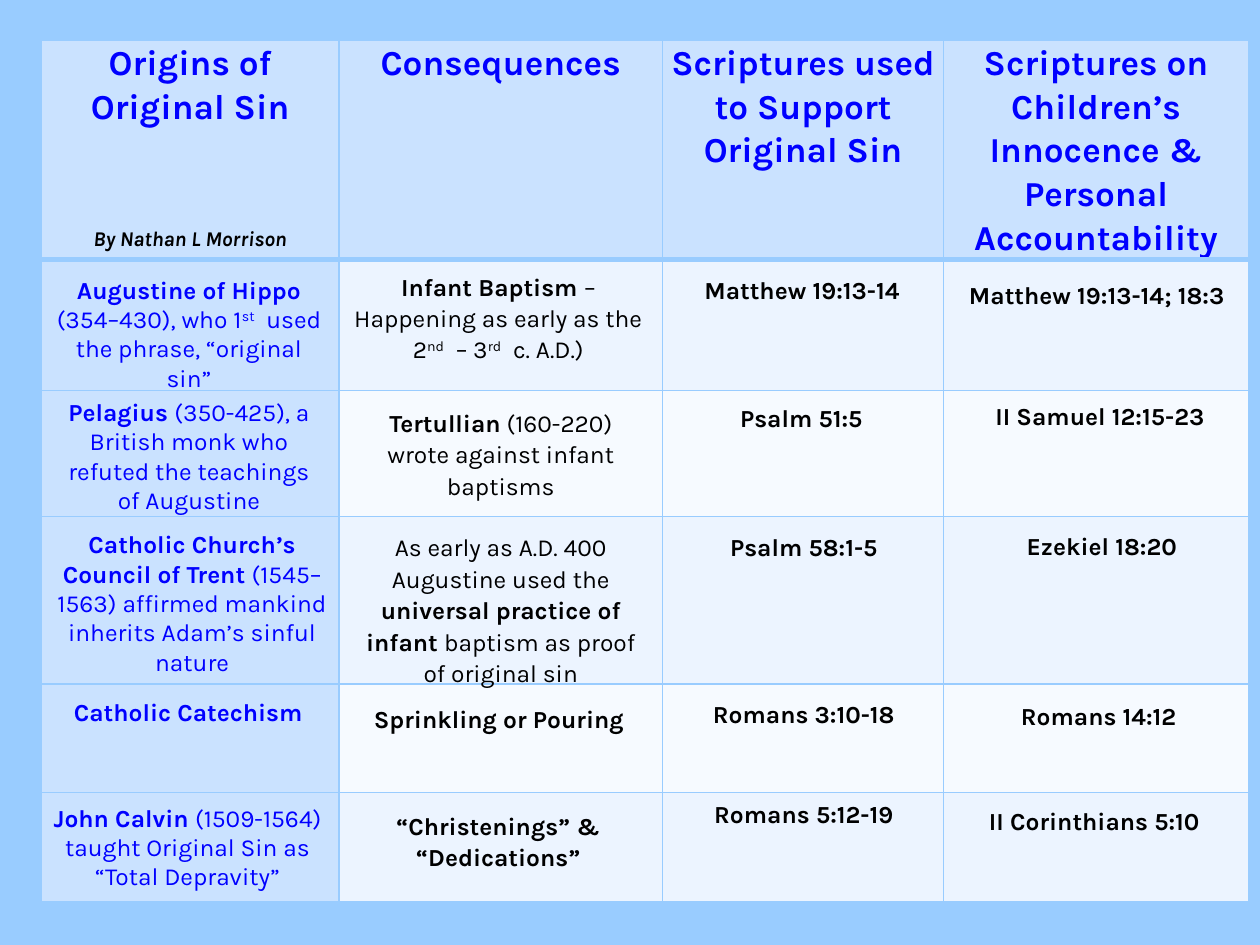
from dataclasses import dataclass
from itertools import accumulate

from lxml.etree import SubElement
from pptx import Presentation
from pptx.dml.color import RGBColor
from pptx.enum.text import MSO_AUTO_SIZE as AutoSize, PP_ALIGN as Align
from pptx.oxml.ns import qn
from pptx.util import Inches, Pt


@dataclass(frozen=True)
class Theme:
    font: str = "Karla"
    background: str = "99CCFF"
    accent_fill: str = "CAE2FF"
    band_fills: tuple = ("ECF4FF", "F6FAFF")
    accent_text: str = "0000FF"
    body_text: str = "000000"
    heading_size: int = 20
    body_size: int = 14
    byline_size: int = 12
    thin_line: int = 1
    thick_line: int = 3
    line_spacing: float = 1.07


THEME = Theme()

TABLE_LEFT, TABLE_TOP = 0.33, 0.32
COLUMN_WIDTHS = [2.36, 2.57, 2.23, 2.42]
ROW_HEIGHTS = [1.73, 1.04, 1, 1.33, 0.86, 0.87]

HEADINGS = [
    "Origins of Original Sin",
    "Consequences",
    "Scriptures used to Support Original Sin",
    "Scriptures on Children’s Innocence & Personal Accountability",
]

# One row of notes per table row. Each note is its offset from the cell corner,
# its width and height, and its text: *bold*, ^superscript^.
NOTES = [
    [
        (0.01, 0.08, 2.32, 1.04, "*Augustine of Hippo *(354–430), who 1^st^  used the phrase, “original sin”"),
        (0.02, 0.04, 2.49, 0.83, "*Infant Baptism *– Happening as early as the 2^nd^  – 3^rd^  c. A.D.)"),
        (0.01, 0.07, 2.19, 0.33, "*Matthew 19:13-14*"),
        (0, 0.11, 2.43, 0.58, "*Matthew 19:13-14; 18:3*"),
    ],
    [
        (0.01, 0.01, 2.32, 1.04, "*Pelagius *(350-425), a British monk who refuted the teachings of Augustine"),
        (0.04, 0.08, 2.49, 0.83, "*Tertullian* (160-220) wrote against infant baptisms"),
        (-0.01, 0.04, 2.22, 0.33, "*Psalm 51:5*"),
        (0.05, 0.03, 2.38, 0.33, "*II Samuel 12:15-23*"),
    ],
    [
        (0.02, 0.06, 2.35, 1.28,
         "*Catholic Church’s Council of Trent *(1545–1563) affirmed mankind inherits Adam’s sinful nature"),
        (0.04, 0.07, 2.49, 1.34,
         "As early as A.D. 400 Augustine used the *universal practice of infant *baptism as proof of original sin"),
        (0.01, 0.07, 2.22, 0.33, "*Psalm 58:1-5*"),
        (0.02, 0.06, 2.47, 0.33, "*Ezekiel 18:20*"),
    ],
    [
        (0, 0.06, 2.33, 0.34, "*Catholic Catechism*"),
        (0.02, 0.1, 2.5, 0.33, "*Sprinkling or Pouring*"),
        (0.01, 0.06, 2.22, 0.33, "*Romans 3:10-18*"),
        (0.02, 0.08, 2.42, 0.33, "*Romans 14:12*"),
    ],
    [
        (-0.02, 0.04, 2.36, 0.81, "*John Calvin *(1509-1564) taught Original Sin as “Total Depravity”"),
        (0, 0.09, 2.53, 0.58, "*“Christenings” & “Dedications”*"),
        (0.01, 0, 2.22, 0.33, "*Romans 5:12-19*"),
        (0, 0.05, 2.39, 0.33, "*II Corinthians 5:10*"),
    ],
]


def write_text(text_frame, text, *, size, color, italic=None, spacing=None):
    """Write one centred paragraph, reading *bold* and ^superscript^ marks."""
    paragraph = text_frame.paragraphs[0]
    paragraph.alignment = Align.CENTER
    paragraph.line_spacing = spacing
    for bold_index, chunk in enumerate(text.split("*")):
        for raised_index, piece in enumerate(chunk.split("^")):
            if not piece:
                continue
            run = paragraph.add_run()
            run.text = piece
            font = run.font
            font.name, font.size = THEME.font, Pt(size)
            font.bold, font.italic = bold_index % 2 == 1, italic
            font.color.rgb = RGBColor.from_string(color)
            if raised_index % 2:
                run._r.get_or_add_rPr().set("baseline", "30000")


def add_note(slide, left, top, width, height, text, grow=True, **text_format):
    shape = slide.shapes.add_textbox(Inches(left), Inches(top), Inches(width), Inches(height))
    text_frame = shape.text_frame
    text_frame.word_wrap = True
    if grow:
        text_frame.auto_size = AutoSize.SHAPE_TO_FIT_TEXT
    write_text(text_frame, text, **text_format)


def set_borders(cell, **widths):
    """Draw the cell's four edges; widths names the edges that are not thin."""
    properties = cell._tc.get_or_add_tcPr()
    for index, edge in enumerate("LRTB"):
        width = widths.get(edge, THEME.thin_line)
        line = SubElement(properties, qn(f"a:ln{edge}"), w=str(Pt(width)))
        fill = SubElement(line, qn("a:solidFill"))
        SubElement(fill, qn("a:srgbClr"), val=THEME.background)
        properties.insert(index, line)


def cell_fill(row, column):
    if row == 0 or column == 0:
        return THEME.accent_fill
    return THEME.band_fills[(row - 1) % 2]


def add_grid(slide, left, top):
    frame = slide.shapes.add_table(
        len(ROW_HEIGHTS), len(COLUMN_WIDTHS), Inches(left), Inches(top),
        Inches(sum(COLUMN_WIDTHS)), Inches(sum(ROW_HEIGHTS)))
    table = frame.table
    table.first_row = table.horz_banding = False
    for column, width in zip(table.columns, COLUMN_WIDTHS):
        column.width = Inches(width)
    for row_index, (row, height) in enumerate(zip(table.rows, ROW_HEIGHTS)):
        row.height = Inches(height)
        for column_index, cell in enumerate(row.cells):
            cell.fill.solid()
            cell.fill.fore_color.rgb = RGBColor.from_string(cell_fill(row_index, column_index))
            heavy_edge = {0: "B", 1: "T"}.get(row_index)
            set_borders(cell, **({heavy_edge: THEME.thick_line} if heavy_edge else {}))
    for cell, heading in zip(table.rows[0].cells, HEADINGS):
        cell.margin_left = cell.margin_right = Inches(0.05)
        cell.margin_top = cell.margin_bottom = 0
        write_text(cell.text_frame, f"*{heading}*", size=THEME.heading_size,
                   color=THEME.accent_text, spacing=THEME.line_spacing)


def add_notes(slide, left, top):
    column_lefts = list(accumulate(COLUMN_WIDTHS[:-1], initial=left))
    row_tops = list(accumulate(ROW_HEIGHTS[:-1], initial=top))[1:]
    for row_top, row_notes in zip(row_tops, NOTES):
        for column, (column_left, note) in enumerate(zip(column_lefts, row_notes)):
            offset_x, offset_y, width, height, text = note
            add_note(slide, column_left + offset_x, row_top + offset_y, width, height, text,
                     size=THEME.body_size,
                     color=THEME.body_text if column else THEME.accent_text,
                     spacing=THEME.line_spacing if column else None)


def add_byline(slide, left, top):
    add_note(slide, left, top + 1.42, COLUMN_WIDTHS[0], 0.35, "*By Nathan L Morrison*",
             grow=False, size=THEME.byline_size, color=THEME.body_text, italic=True)


def main():
    presentation = Presentation()
    presentation.slide_width, presentation.slide_height = Inches(10), Inches(7.5)
    slide = presentation.slides.add_slide(presentation.slide_layouts[6])
    slide.background.fill.solid()
    slide.background.fill.fore_color.rgb = RGBColor.from_string(THEME.background)
    for add_region in (add_grid, add_notes, add_byline):
        add_region(slide, TABLE_LEFT, TABLE_TOP)
    presentation.save("out.pptx")


if __name__ == "__main__":
    main()
